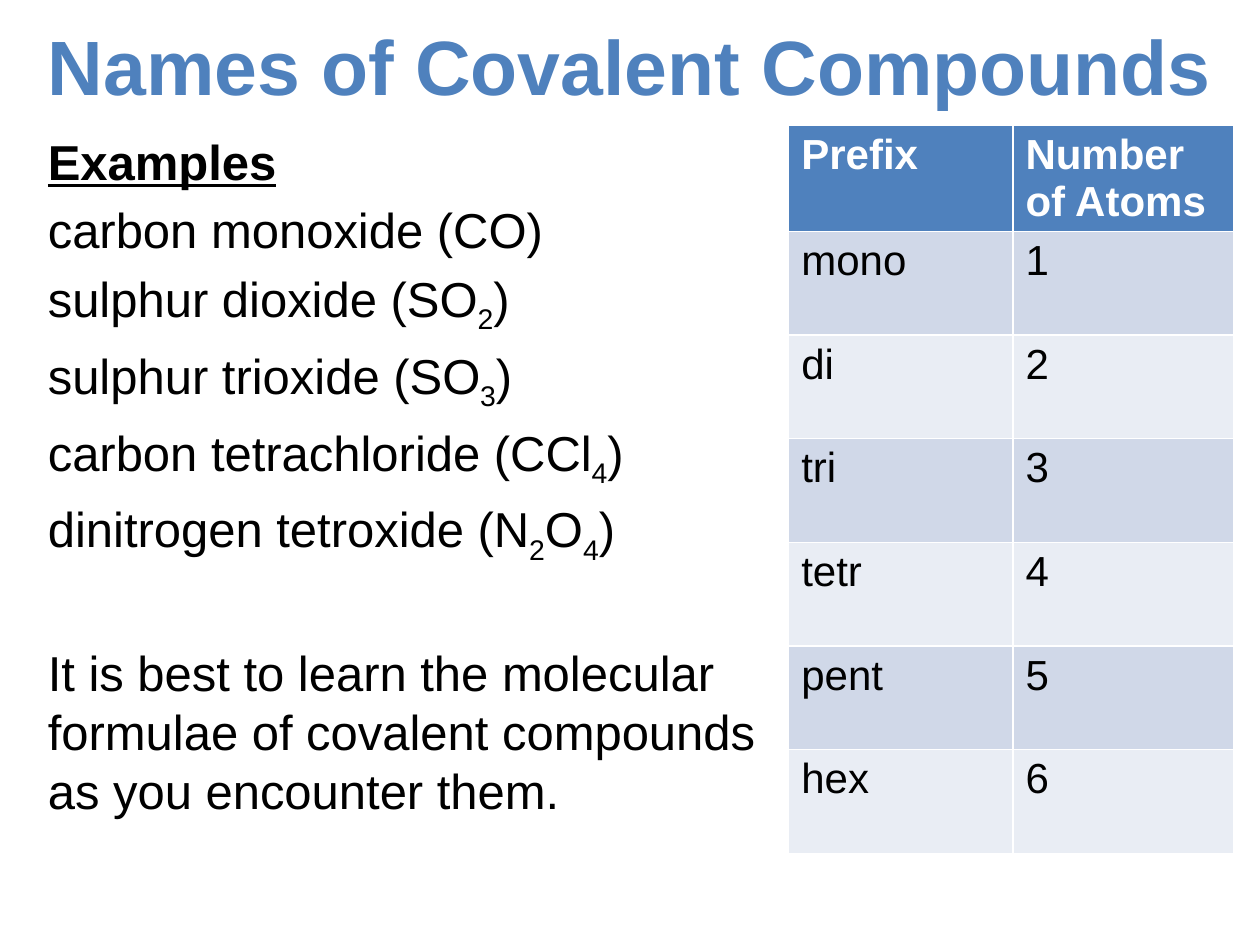
"""Build a slide on naming covalent compounds, with examples and a prefix table."""
from itertools import groupby

from lxml.etree import SubElement
from pptx import Presentation
from pptx.dml.color import RGBColor
from pptx.enum.text import MSO_ANCHOR, MSO_AUTO_SIZE, PP_ALIGN
from pptx.oxml.ns import qn
from pptx.util import Cm, Pt

FONT = "Arial"
BLUE = RGBColor(0x4F, 0x81, 0xBD)
BLACK = RGBColor(0, 0, 0)
WHITE = RGBColor(0xFF, 0xFF, 0xFF)
BANDS = (RGBColor(0xE9, 0xED, 0xF4), RGBColor(0xD0, 0xD8, 0xE8))

TITLE = "Names of Covalent Compounds"
HEADING = "Examples"
EXAMPLES = [
    "carbon monoxide (CO)",
    "sulphur dioxide (SO2)",
    "sulphur trioxide (SO3)",
    "carbon tetrachloride (CCl4)",
    "dinitrogen tetroxide (N2O4)",
]
ADVICE = ("It is best to learn the molecular formulae of covalent compounds "
          "as you encounter them.")
PREFIXES = [
    ("Prefix", "Number of Atoms"),
    ("mono", "1"),
    ("di", "2"),
    ("tri", "3"),
    ("tetr", "4"),
    ("pent", "5"),
    ("hex", "6"),
]
COLUMN_WIDTHS = (Cm(4.52), Cm(4.46))
ROW_HEIGHT = Cm(2.09)
LINE_GAP = Pt(5.6)
ADVICE_GAP = Pt(44)


def place(part, left, top, width, height):
    part.left, part.top = Cm(left), Cm(top)
    part.width, part.height = Cm(width), Cm(height)


def style(paragraph, size, color, bold=False):
    font = paragraph.font
    font.name, font.size, font.bold = FONT, Pt(size), bold
    font.color.rgb = color


def add_formula_text(paragraph, text):
    for is_subscript, letters in groupby(text, str.isdigit):
        run = paragraph.add_run()
        run.text = "".join(letters)
        if is_subscript:
            run._r.get_or_add_rPr().set("baseline", "-25000")


def fill_title(title):
    place(title, 0.5, 0.05, 24.4, 2.5)
    title.text_frame.text = TITLE
    title.text_frame.vertical_anchor = MSO_ANCHOR.MIDDLE
    title.text_frame.auto_size = MSO_AUTO_SIZE.NONE
    heading = title.text_frame.paragraphs[0]
    heading.alignment = PP_ALIGN.CENTER
    style(heading, 44, BLUE, bold=True)


def fill_body(body):
    place(body, 0.71, 2.52, 14.8, 16)
    frame = body.text_frame
    frame.auto_size = MSO_AUTO_SIZE.NONE
    lines = [HEADING, *EXAMPLES, ADVICE]
    for index, line in enumerate(lines):
        paragraph = frame.add_paragraph() if index else frame.paragraphs[0]
        add_formula_text(paragraph, line)
        paragraph.space_before = ADVICE_GAP if line == ADVICE else LINE_GAP
        properties = paragraph._p.get_or_add_pPr()
        properties.set("marL", "0")
        properties.set("indent", "0")
        SubElement(properties, qn("a:buNone"))
        style(paragraph, 28, BLACK, bold=line == HEADING)
        paragraph.font.underline = line == HEADING


def add_prefix_table(slide):
    table = slide.shapes.add_table(
        len(PREFIXES), len(COLUMN_WIDTHS), Cm(15.9), Cm(2.52),
        sum(COLUMN_WIDTHS), ROW_HEIGHT * len(PREFIXES)).table
    for column, width in zip(table.columns, COLUMN_WIDTHS):
        column.width = width
    for index, (row, entries) in enumerate(zip(table.rows, PREFIXES)):
        row.height = ROW_HEIGHT
        is_header = index == 0
        for cell, entry in zip(row.cells, entries):
            cell.text = entry
            cell.fill.solid()
            cell.fill.fore_color.rgb = BLUE if is_header else BANDS[index % 2]
            style(cell.text_frame.paragraphs[0], 24,
                  WHITE if is_header else BLACK, bold=is_header)


def main():
    presentation = Presentation()
    presentation.slide_width, presentation.slide_height = Cm(25.4), Cm(19.05)
    slide = presentation.slides.add_slide(presentation.slide_layouts[1])
    fill_title(slide.shapes.title)
    fill_body(slide.placeholders[1])
    add_prefix_table(slide)
    presentation.save("out.pptx")


if __name__ == "__main__":
    main()
